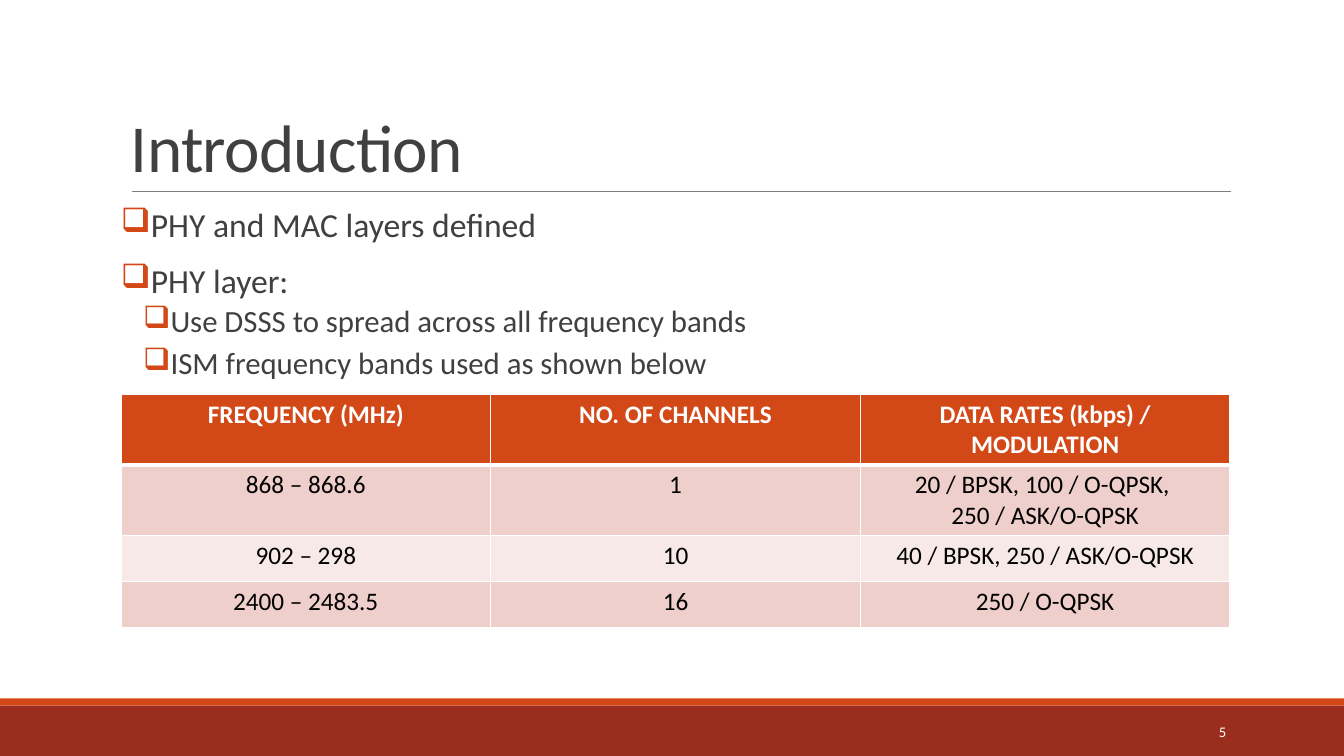
"""Build the Introduction slide with its bullet list and frequency band table."""
import dataclasses

import lxml.etree
import pptx
import pptx.dml.color
import pptx.enum.shapes
import pptx.enum.text
import pptx.oxml.ns
import pptx.util

Inches = pptx.util.Inches
Pt = pptx.util.Pt
Align = pptx.enum.text.PP_ALIGN
Anchor = pptx.enum.text.MSO_ANCHOR


@dataclasses.dataclass(frozen=True)
class Theme:
    font: str = "Calibri"
    accent: str = "D34817"
    footer: str = "9B2D1F"
    rule: str = "808080"
    text: str = "404040"
    cell_text: str = "000000"
    light: str = "FFFFFF"
    bands: tuple = ("EFCFCC", "F7E9E8")
    title_size: float = 48
    bullet_sizes: tuple = (24, 22)
    table_size: float = 18
    number_size: float = 10.5


THEME = Theme()
POINTS = [
    (0, "PHY and MAC layers defined"),
    (0, "PHY layer:"),
    (1, "Use DSSS to spread across all frequency bands"),
    (1, "ISM frequency bands used as shown below"),
]
LEVELS = [
    {"left": 0.1, "hang": 0.1, "before": 12, "after": 2},
    {"left": 0.42, "hang": 0.2, "before": 2, "after": 4},
]
BANDS = [
    [["FREQUENCY (MHz)"], ["NO. OF CHANNELS"], ["DATA RATES (kbps) / MODULATION"]],
    [["868 – 868.6"], ["1"], ["20 / BPSK, 100 / O-QPSK, ", "250 / ASK/O-QPSK"]],
    [["902 – 298"], ["10"], ["40 / BPSK, 250 / ASK/O-QPSK"]],
    [["2400 – 2483.5"], ["16"], ["250 / O-QPSK"]],
]
ROW_HEIGHTS = [0.7, 0.7, 0.46, 0.46]


def rgb(color):
    return pptx.dml.color.RGBColor.from_string(color)


def add_xml(parent, tag, **attributes):
    return lxml.etree.SubElement(parent, pptx.oxml.ns.qn(tag), attributes)


def add_run(paragraph, text, size, color, bold=False):
    run = paragraph.add_run()
    run.text = text
    run.font.name = THEME.font
    run.font.size = Pt(size)
    run.font.bold = bold
    run.font.color.rgb = rgb(color)
    return run


def add_frame(slide, left, top, width, height, anchor, side_inset=0.1):
    box = slide.shapes.add_textbox(Inches(left), Inches(top), Inches(width), Inches(height))
    frame = box.text_frame
    frame.word_wrap = True
    frame.vertical_anchor = anchor
    frame.margin_left = frame.margin_right = Inches(side_inset)
    return frame


def add_bar(slide, top, height, color):
    bar = slide.shapes.add_shape(
        pptx.enum.shapes.MSO_SHAPE.RECTANGLE, 0, Inches(top), Inches(13.33), Inches(height))
    bar.shadow.inherit = False
    bar.fill.solid()
    bar.fill.fore_color.rgb = rgb(color)
    bar.line.fill.background()


def add_title_rule(slide):
    rule = slide.shapes.add_connector(
        pptx.enum.shapes.MSO_CONNECTOR.STRAIGHT,
        Inches(1.31), Inches(1.9), Inches(12.21), Inches(1.9))
    rule.line.color.rgb = rgb(THEME.rule)
    rule.line.width = Pt(0.5)
    add_xml(rule._element.spPr, "a:effectLst")


def add_title(slide, text):
    heading = add_frame(slide, 1.2, 0.31, 11, 1.59, Anchor.BOTTOM).paragraphs[0]
    heading.line_spacing = 0.85
    run = add_run(heading, text, THEME.title_size, THEME.text)
    run.font._element.set("spc", "-50")


def add_points(slide, points):
    frame = add_frame(slide, 1.2, 2.02, 11, 1.89, Anchor.TOP, side_inset=0)
    for index, (level, text) in enumerate(points):
        point = frame.add_paragraph() if index else frame.paragraphs[0]
        layout = LEVELS[level]
        point.level = level
        point.line_spacing = 0.9
        point.space_before = Pt(layout["before"])
        point.space_after = Pt(layout["after"])
        properties = point._p.get_or_add_pPr()
        properties.set("marL", str(Inches(layout["left"])))
        properties.set("indent", str(-Inches(layout["hang"])))
        add_xml(add_xml(properties, "a:buClr"), "a:srgbClr", val=THEME.accent)
        add_xml(properties, "a:buChar", char="❑")
        add_run(point, text, THEME.bullet_sizes[level], THEME.text)


def set_borders(cell, top, bottom):
    properties = cell._tc.get_or_add_tcPr()
    widths = {"a:lnL": 1, "a:lnR": 1, "a:lnT": top, "a:lnB": bottom}
    for index, (side, width) in enumerate(widths.items()):
        border = add_xml(properties, side, w=str(Pt(width)))
        add_xml(add_xml(border, "a:solidFill"), "a:srgbClr", val=THEME.light)
        properties.insert(index, border)


def fill_cell(cell, lines, row):
    header = row == 0
    cell.fill.solid()
    cell.fill.fore_color.rgb = rgb(THEME.accent if header else THEME.bands[(row - 1) % 2])
    set_borders(cell, top=3 if row == 1 else 1, bottom=3 if header else 1)
    color = THEME.light if header else THEME.cell_text
    for index, text in enumerate(lines):
        line = cell.text_frame.add_paragraph() if index else cell.text_frame.paragraphs[0]
        line.alignment = Align.CENTER
        add_run(line, text, THEME.table_size, color, bold=header)


def add_band_table(slide, bands):
    table = slide.shapes.add_table(
        len(bands), len(bands[0]), Inches(1.2), Inches(3.91),
        Inches(11), Inches(sum(ROW_HEIGHTS))).table
    for row, (height, cells) in enumerate(zip(ROW_HEIGHTS, bands)):
        table.rows[row].height = Inches(height)
        for column, lines in enumerate(cells):
            fill_cell(table.cell(row, column), lines, row)


def add_slide_number(slide, number):
    line = add_frame(slide, 10.83, 7.06, 1.43, 0.4, Anchor.MIDDLE).paragraphs[0]
    line.alignment = Align.RIGHT
    add_run(line, number, THEME.number_size, THEME.light)


def main():
    deck = pptx.Presentation()
    deck.slide_width = Inches(13.33)
    deck.slide_height = Inches(7.5)
    slide = deck.slides.add_slide(deck.slide_layouts[6])
    add_bar(slide, 7, 0.5, THEME.footer)
    add_bar(slide, 6.93, 0.07, THEME.accent)
    add_title_rule(slide)
    add_title(slide, "Introduction")
    add_points(slide, POINTS)
    add_slide_number(slide, "5")
    add_band_table(slide, BANDS)
    deck.save("out.pptx")


if __name__ == "__main__":
    main()
